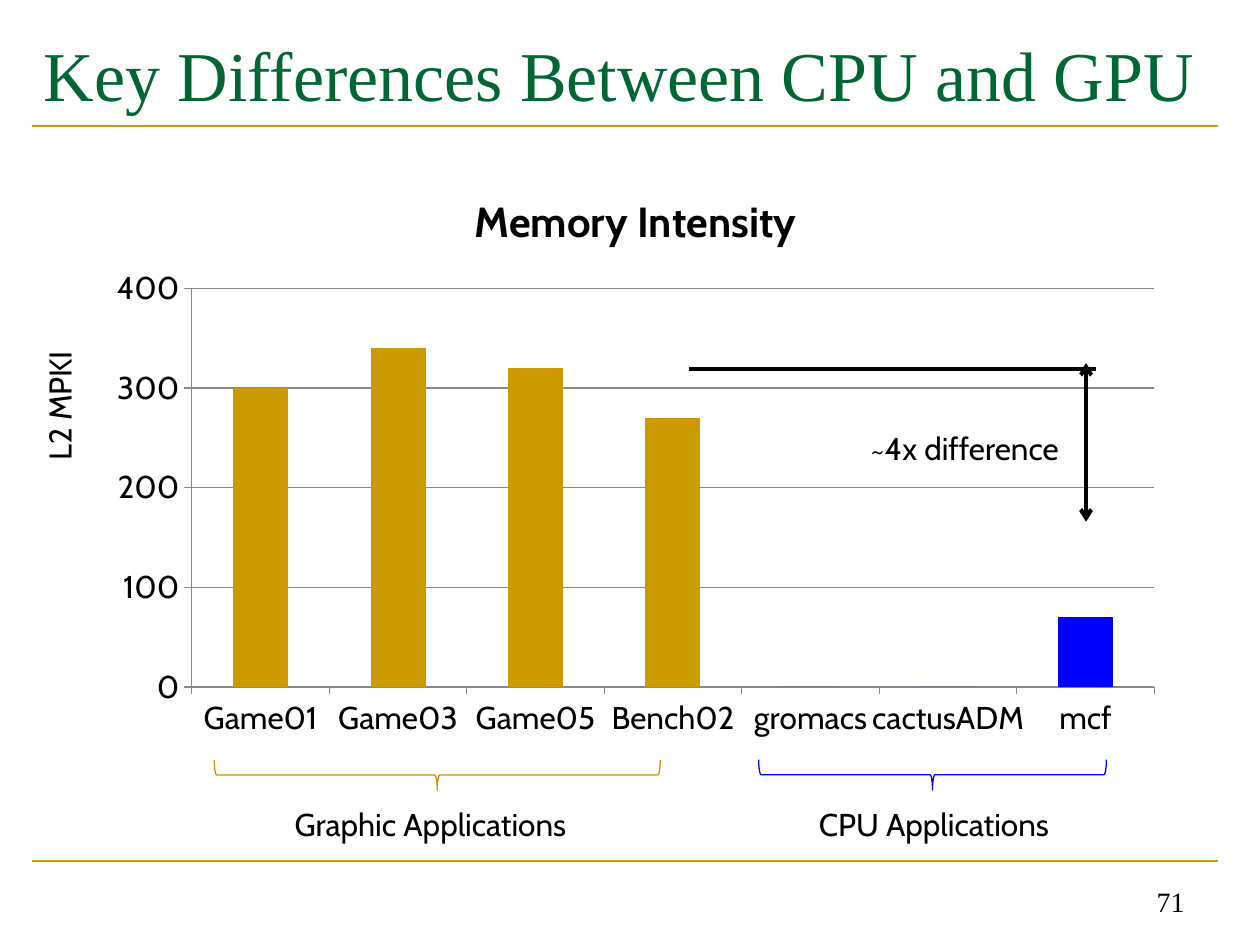
from lxml import etree
from pptx import Presentation
from pptx.chart.data import CategoryChartData
from pptx.dml.color import RGBColor
from pptx.enum.chart import XL_CHART_TYPE, XL_TICK_MARK
from pptx.enum.shapes import MSO_CONNECTOR, MSO_SHAPE
from pptx.enum.text import MSO_ANCHOR, PP_ALIGN
from pptx.oxml import parse_xml
from pptx.oxml.ns import qn
from pptx.util import Pt

COLUMN = XL_CHART_TYPE.COLUMN_CLUSTERED
OUT = XL_TICK_MARK.OUTSIDE
LINE = MSO_CONNECTOR.STRAIGHT
BRACE = MSO_SHAPE.RIGHT_BRACE
TOP, MIDDLE, BOTTOM = MSO_ANCHOR.TOP, MSO_ANCHOR.MIDDLE, MSO_ANCHOR.BOTTOM
LEFT, RIGHT = PP_ALIGN.LEFT, PP_ALIGN.RIGHT
SERIF, SANS = "Times New Roman", "Cabin"
HEX = {"gold": "CC9900", "ochre": "C89600", "green": "006633",
       "blue": "0000FF", "black": "000000", "gray": "878787"}
RGB = {name: RGBColor.from_string(code) for name, code in HEX.items()}

prs = Presentation()
prs.slide_width, prs.slide_height = Pt(720), Pt(540)
slide = prs.slides.add_slide(prs.slide_layouts[6])
shapes = slide.shapes


def add_text(text, box, size=18, face=SANS, color="black", wrap=False,
             anchor=TOP, align=LEFT):
    shape = shapes.add_textbox(*map(Pt, box))
    frame = shape.text_frame
    frame.text = text
    frame.word_wrap = wrap
    frame.vertical_anchor = anchor
    para = frame.paragraphs[0]
    para.alignment = align
    font = para.runs[0].font
    font.size, font.name = Pt(size), face
    font.color.rgb = RGB[color]
    return shape


def add_line(x1, y1, x2, y2, color, width):
    line = shapes.add_connector(LINE, Pt(x1), Pt(y1), Pt(x2), Pt(y2))
    line.line.color.rgb = RGB[color]
    line.line.width = Pt(width)
    etree.SubElement(line._element.spPr, qn("a:effectLst"))
    return line


# Frame of the slide
for y in (492, 72):
    add_line(18, y, 696, y, "gold", 1.5)
add_text("Key Differences Between CPU and GPU", (18, 12, 678, 60), 40, SERIF,
         "green", wrap=True, anchor=MIDDLE)
add_text("71", (516, 492, 168, 36), 16, SERIF, wrap=True, anchor=BOTTOM,
         align=RIGHT)

# Chart
data = CategoryChartData()
data.categories = ["Game01", "Game03", "Game05", "Bench02",
                   "gromacs", "cactusADM", "mcf"]
data.add_series("Memory Intensity", (300, 340, 320, 270, 0, 0, 70))
chart = shapes.add_chart(COLUMN, Pt(54), Pt(94.5), Pt(618), Pt(335),
                         data).chart
chart.font.name, chart.font.size = SANS, Pt(10)
chart.font.color.rgb = RGB["black"]
chart.has_legend = False
chart.has_title = True
title = chart.chart_title.text_frame
title.text = "Memory Intensity"
font = title.paragraphs[0].runs[0].font
font.size, font.bold, font.name = Pt(24), True, SANS
font.color.rgb = RGB["black"]

for axis in (chart.category_axis, chart.value_axis):
    axis.major_tick_mark = OUT
    axis.tick_labels.font.size = Pt(18)
    axis.format.line.color.rgb = RGB["gray"]
scale = chart.value_axis
scale.minimum_scale, scale.maximum_scale, scale.major_unit = 0, 400, 100
scale.has_major_gridlines = True
scale.major_gridlines.format.line.color.rgb = RGB["gray"]

plot = chart.plots[0]
plot.gap_width = 150
plot.vary_by_categories = False
bars = plot.series[0]
bars.format.fill.solid()
bars.format.fill.fore_color.rgb = RGB["gold"]
for index in (4, 5, 6):
    fill = bars.points[index].format.fill
    fill.solid()
    fill.fore_color.rgb = RGB["blue"]

# Fixed place of the plot inside the chart, as shares of its size
area = chart._chartSpace.chart.plotArea
for old in area.findall(qn("c:layout")):
    area.remove(old)
area.insert(0, parse_xml(
    '<c:layout xmlns:c="http://schemas.openxmlformats.org/drawingml/2006/chart">'
    '<c:manualLayout><c:layoutTarget val="inner"/>'
    '<c:xMode val="edge"/><c:yMode val="edge"/>'
    '<c:x val="0.09"/><c:y val="0.21"/><c:w val="0.89"/><c:h val="0.68"/>'
    '</c:manualLayout></c:layout>'))

# Labels and braces
add_text("L2 MPKI", (-6.5, 215.3, 80.6, 28.8)).rotation = 270
add_text("Graphic Applications", (161.3, 456.5, 176.4, 28.8))
add_text("CPU Applications", (460.8, 456.5, 148.3, 28.8))
for x, y, length, color in ((241.2, 315.4, 254.9, "ochre"),
                            (524.2, 343.4, 198.7, "blue")):
    brace = shapes.add_shape(BRACE, Pt(x), Pt(y), Pt(17.3), Pt(length))
    brace.rotation = 90
    brace.shadow.inherit = False
    brace.fill.background()
    brace.line.color.rgb = RGB[color]
    brace.line.width = Pt(0.75)

# Gap between the two groups
arrow = add_line(620.6, 207.4, 620.6, 298.1, "black", 2.25)
for end in ("a:headEnd", "a:tailEnd"):
    etree.SubElement(arrow.line._get_or_add_ln(), qn(end), type="arrow")
add_line(393.8, 211, 626.4, 211, "black", 2.25)
add_text("~4x difference", (490.3, 241.9, 131.8, 28.8))

prs.save("out.pptx")
